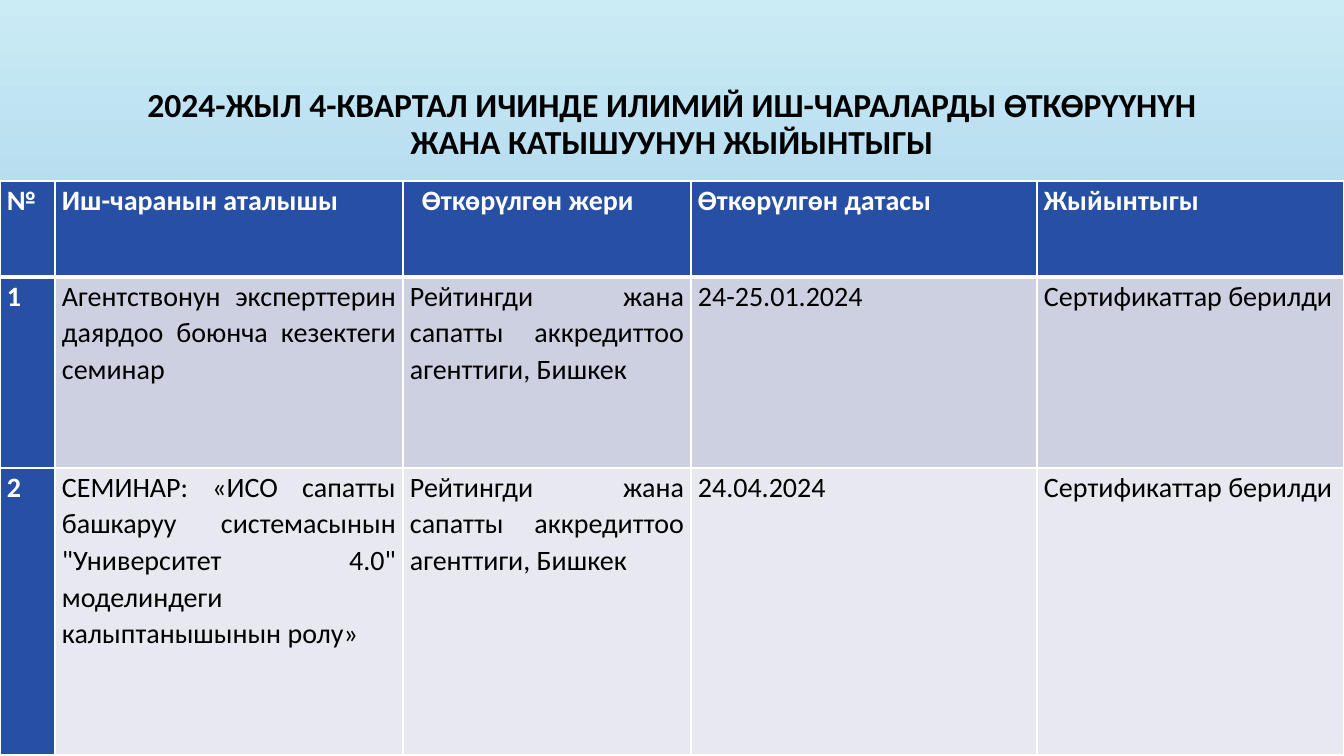
from lxml.etree import SubElement
from pptx import Presentation
from pptx.dml.color import RGBColor
from pptx.enum.text import MSO_ANCHOR, PP_ALIGN
from pptx.oxml.ns import qn
from pptx.util import Emu, Pt

SLIDE_WIDTH, SLIDE_HEIGHT = 1344, 756
EMU_PER_PX = 12192000 / SLIDE_WIDTH
COLORS = {
    "sky_top": "CBECF5",
    "sky_bottom": "73ABDD",
    "black": "000000",
    "white": "FFFFFF",
    "header": "274FA4",
    "odd_row": "CDD0E0",
    "even_row": "E8E9F0",
}
TITLE = "2024-ЖЫЛ 4-КВАРТАЛ ИЧИНДЕ ИЛИМИЙ ИШ-ЧАРАЛАРДЫ ӨТКӨРҮҮНҮН ЖАНА КАТЫШУУНУН ЖЫЙЫНТЫГЫ"
VENUE = "Рейтингди жана сапатты аккредиттоо агенттиги, Бишкек"
RESULT = "Сертификаттар берилди"
EVENTS = [
    ["№", "Иш-чаранын аталышы", "Өткөрүлгөн жери", "Өткөрүлгөн датасы", "Жыйынтыгы"],
    ["1", "Агентствонун эксперттерин даярдоо боюнча кезектеги семинар",
     VENUE, "24-25.01.2024", RESULT],
    ["2", "СЕМИНАР: «ИСО сапатты башкаруу системасынын \"Университет 4.0\" моделиндеги "
     "калыптанышынын ролу»", VENUE, "24.04.2024", RESULT],
]
COLUMN_WIDTHS = [55, 348, 288, 346, 307]
ROW_HEIGHTS = [96, 191, 287]
VENUE_COLUMN = 2


def px(length):
    """Turn pixels into EMU."""
    return Emu(round(length * EMU_PER_PX))


def rgb(name):
    """Look up a named colour."""
    return RGBColor.from_string(COLORS[name])


def write_text(frame, text, size=20, color="black", bold=False,
               align=PP_ALIGN.JUSTIFY, line_spacing=1.07, indent=0):
    """Write one formatted paragraph into a text frame."""
    frame.word_wrap = True
    paragraph = frame.paragraphs[0]
    paragraph.alignment = align
    paragraph.line_spacing = line_spacing
    if indent:
        paragraph._p.get_or_add_pPr().set("marL", str(px(indent)))
    run = paragraph.add_run()
    run.text = text
    run.font.name = "Calibri"
    run.font.size = Pt(size)
    run.font.bold = bold
    run.font.color.rgb = rgb(color)


def set_borders(cell, **widths):
    """Give a cell white borders with point widths keyed by L, R, T and B."""
    properties = cell._tc.get_or_add_tcPr()
    for position, side in enumerate("LRTB"):
        line = SubElement(properties, qn(f"a:ln{side}"), w=str(Pt(widths.get(side, 1))))
        fill = SubElement(line, qn("a:solidFill"))
        SubElement(fill, qn("a:srgbClr"), val=COLORS["white"])
        properties.insert(position, line)


def paint_background(slide):
    """Fill the slide with a vertical sky gradient."""
    fill = slide.background.fill
    fill.gradient()
    fill.gradient_angle = 270
    for stop, name in zip(fill.gradient_stops, ("sky_top", "sky_bottom")):
        stop.color.rgb = rgb(name)


def add_title(slide, left, top, width, height):
    """Place the centred heading in the upper part of its box."""
    frame = slide.shapes.add_textbox(px(left), px(top), px(width), px(height)).text_frame
    frame.vertical_anchor = MSO_ANCHOR.MIDDLE
    frame.margin_bottom = px(69)
    write_text(frame, TITLE, size=24, bold=True, align=PP_ALIGN.CENTER, line_spacing=0.9)


def add_events_table(slide, left, top, width, height):
    """Place the table of events with a coloured header row and number column."""
    table = slide.shapes.add_table(len(EVENTS), len(COLUMN_WIDTHS), px(left), px(top),
                                   px(width), px(height)).table
    table.horz_banding = False
    for column, column_width in zip(table.columns, COLUMN_WIDTHS):
        column.width = px(column_width)
    for row_index, (row, row_height) in enumerate(zip(table.rows, ROW_HEIGHTS)):
        row.height = px(row_height)
        for column_index, cell in enumerate(row.cells):
            is_header = row_index == 0 or column_index == 0
            row_fill = "odd_row" if row_index % 2 else "even_row"
            cell.margin_left = cell.margin_right = px(7)
            cell.margin_top = cell.margin_bottom = 0
            cell.fill.solid()
            cell.fill.fore_color.rgb = rgb("header" if is_header else row_fill)
            set_borders(cell, T=3 if row_index == 1 else 1, B=3 if row_index == 0 else 1)
            write_text(cell.text_frame, EVENTS[row_index][column_index],
                       color="white" if is_header else "black", bold=is_header,
                       indent=12 if (row_index, column_index) == (0, VENUE_COLUMN) else 0)


def main():
    """Build and save the slide."""
    presentation = Presentation()
    presentation.slide_width = px(SLIDE_WIDTH)
    presentation.slide_height = px(SLIDE_HEIGHT)
    slide = presentation.slides.add_slide(presentation.slide_layouts[6])
    paint_background(slide)
    add_title(slide, 101, 69, 1142, 176)
    add_events_table(slide, 0, 181, sum(COLUMN_WIDTHS), sum(ROW_HEIGHTS))
    presentation.save("out.pptx")


if __name__ == "__main__":
    main()
